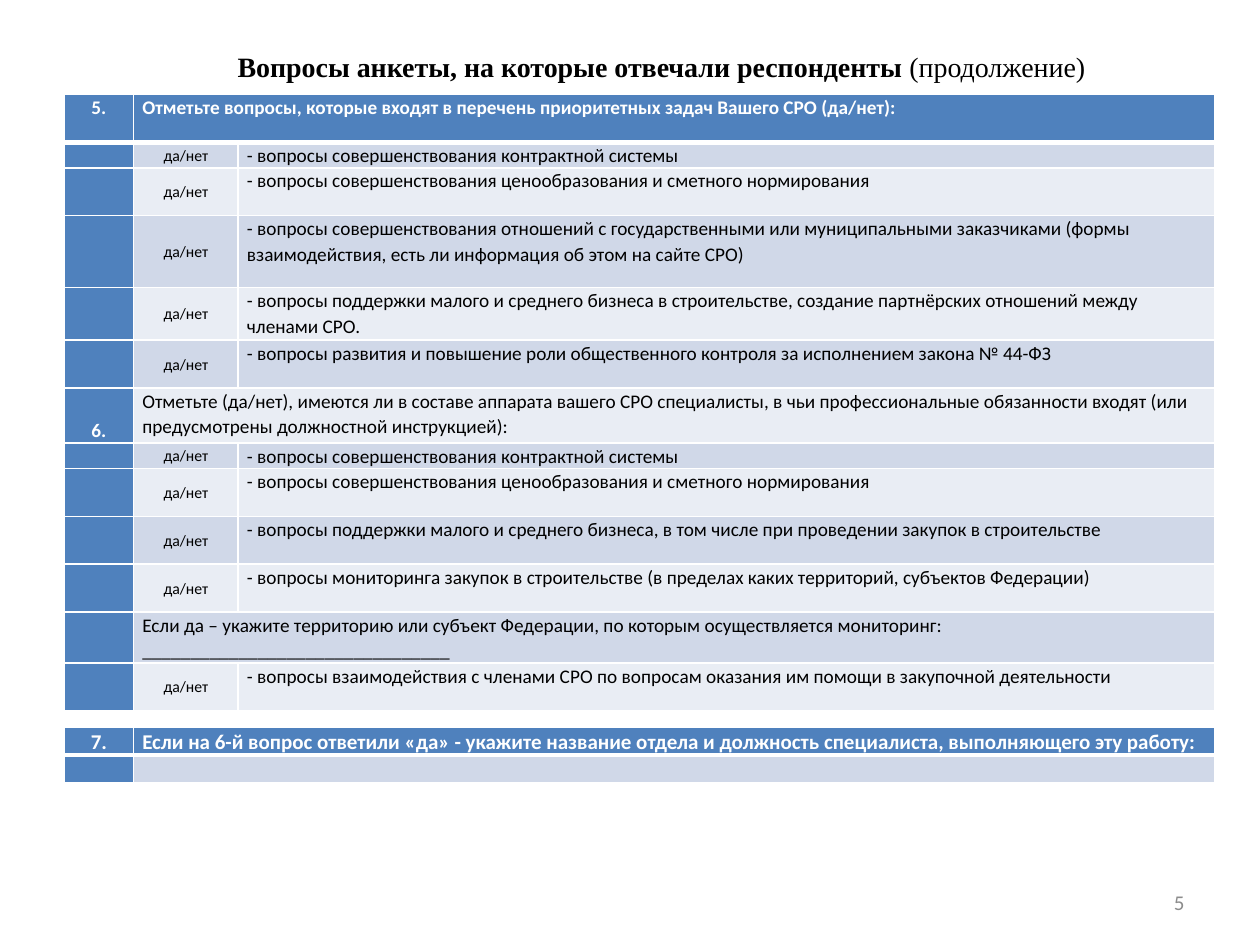
from dataclasses import dataclass

from lxml import etree
from pptx import Presentation
from pptx import util as u
from pptx.dml.color import RGBColor
from pptx.enum import text
from pptx.oxml import ns

WHITE = RGBColor(0xFF, 0xFF, 0xFF)
BLACK = RGBColor(0, 0, 0)
GREY = RGBColor(0x8C, 0x8C, 0x8C)
BLUE = RGBColor(0x4F, 0x81, 0xBD)
BANDS = (RGBColor(0xE9, 0xED, 0xF4), RGBColor(0xD0, 0xD8, 0xE8))
WIDE, HIGH = u.Inches(10), u.Inches(7.5)
UNIT = u.Inches(0.19)
LEFT, CENTER, RIGHT = text.PP_ALIGN.LEFT, text.PP_ALIGN.CENTER, text.PP_ALIGN.RIGHT
TOP, MIDDLE, BOTTOM = (text.MSO_ANCHOR.TOP, text.MSO_ANCHOR.MIDDLE,
                       text.MSO_ANCHOR.BOTTOM)
YESNO = "да/нет"


@dataclass
class Row:
    """One table row: its height in units, text, number and kind."""
    units: float
    body: str = ""
    num: str = ""
    mark: str = ""
    anchor: int = TOP


def ask(units: float, body: str) -> Row:
    """Make a row that is answered with yes or no."""
    return Row(units, "- " + body, mark=YESNO)


CONTRACT = ask(1.03, "вопросы совершенствования контрактной системы")
PRICING = ask(2, "вопросы совершенствования ценообразования и сметного нормирования")
SURVEY = [
    Row(2, "Отметьте вопросы, которые входят в перечень приоритетных задач Вашего СРО (да/нет):", "5."),
    CONTRACT,
    PRICING,
    ask(3, "вопросы совершенствования отношений с государственными или муниципальными заказчиками "
           "(формы взаимодействия, есть ли информация об этом на сайте СРО)"),
    ask(2.2, "вопросы поддержки малого и среднего бизнеса в строительстве, создание партнёрских "
             "отношений между членами СРО."),
    ask(2, "вопросы развития и повышение роли общественного контроля за исполнением закона № 44-ФЗ"),
    Row(2.3, "Отметьте (да/нет), имеются ли в составе аппарата вашего СРО специалисты, в чьи "
             "профессиональные обязанности входят (или предусмотрены должностной инструкцией):", "6."),
    CONTRACT,
    PRICING,
    ask(2, "вопросы поддержки малого и среднего бизнеса, в том числе при проведении закупок в строительстве"),
    ask(2, "вопросы мониторинга закупок в строительстве (в пределах каких территорий, субъектов Федерации)"),
    Row(2.1, "Если да – укажите территорию или субъект Федерации, по которым осуществляется "
             "мониторинг: " + "_" * 32, anchor=MIDDLE),
    ask(2, "вопросы взаимодействия с членами СРО по вопросам оказания им помощи в закупочной деятельности"),
]
STAFF = [
    Row(1.15, "Если на 6-й вопрос ответили «да» - укажите название отдела и должность "
              "специалиста, выполняющего эту работу:", "7."),
    Row(1.15),
]


def write(para, words: str, size: float = 11, name: str = "Calibri",
          color: RGBColor = BLACK, bold: bool = False, align=LEFT, lead: float = 1) -> None:
    """Add a formatted run to a paragraph."""
    para.alignment, para.line_spacing = align, lead
    if not words:
        etree.SubElement(para._p, ns.qn("a:endParaRPr"), sz=str(int(size * 100)))
        return
    run = para.add_run()
    run.text = words
    font = run.font
    font.size, font.name, font.bold = u.Pt(size), name, bold
    font.color.rgb = color


def edge(cell, top: float, base: float) -> None:
    """Draw white borders around a cell."""
    prop = cell._tc.get_or_add_tcPr()
    for side, width in (("L", 1), ("R", 1), ("T", top), ("B", base)):
        line = etree.SubElement(prop, ns.qn("a:ln" + side), w=str(u.Pt(width)))
        fill = etree.SubElement(line, ns.qn("a:solidFill"))
        etree.SubElement(fill, ns.qn("a:srgbClr"), val=str(WHITE))


def dress(cell, fill: RGBColor, index: int, anchor=TOP) -> None:
    """Set the borders, fill, margins and anchor of a cell."""
    edge(cell, 3 if index == 1 else 1, 3 if index == 0 else 1)
    cell.fill.solid()
    cell.fill.fore_color.rgb = fill
    cell.margin_left = cell.margin_right = u.Inches(0.07)
    cell.margin_top = cell.margin_bottom = 0
    cell.vertical_anchor = anchor


def grid(slide, top: float, cols: list[float], rows: list[Row], size: float) -> None:
    """Draw a survey table with columns given as shares of the slide width."""
    high = int(sum(row.units for row in rows) * UNIT)
    table = slide.shapes.add_table(len(rows), len(cols), int(WIDE * 0.051),
                                   int(HIGH * top), int(WIDE * sum(cols)), high).table
    for col, share in zip(table.columns, cols):
        col.width = int(WIDE * share)
    last = len(cols) - 1
    for i, row in enumerate(rows):
        table.rows[i].height = int(row.units * UNIT)
        head = i == 0
        shade = BLUE if head else BANDS[i % 2]
        cells = [table.cell(i, j) for j in range(len(cols))]
        dress(cells[0], BLUE, i, TOP if head else BOTTOM)
        for cell in cells[1:]:
            dress(cell, shade, i, row.anchor)
        write(cells[0].text_frame.paragraphs[0], row.num, size=size, color=WHITE,
              bold=True, align=CENTER, lead=1.07)
        body = cells[last]
        if row.mark:
            cells[1].vertical_anchor = MIDDLE
            write(cells[1].text_frame.paragraphs[0], row.mark, size=9,
                  align=CENTER, lead=1.07)
        elif last > 1:
            cells[1].merge(body)
            body = cells[1]
        write(body.text_frame.paragraphs[0], row.body, size=size,
              color=WHITE if head else BLACK, bold=head, lead=1.07)


def place(shape, x: float, y: float, w: float, h: float) -> None:
    """Position a shape by shares of the slide size."""
    shape.left, shape.top = int(WIDE * x), int(HIGH * y)
    shape.width, shape.height = int(WIDE * w), int(HIGH * h)


def main() -> None:
    """Build the survey slide."""
    deck = Presentation()
    deck.slide_width, deck.slide_height = WIDE, HIGH
    slide = deck.slides.add_slide(deck.slide_layouts[5])
    title = slide.shapes.title
    place(title, 0.1, 0.04, 0.85, 0.06)
    title.text_frame.vertical_anchor = MIDDLE
    para = title.text_frame.paragraphs[0]
    for words, bold in (("Вопросы анкеты, на которые отвечали респонденты ", True),
                        ("(продолжение)", False)):
        write(para, words, size=16, name="Times New Roman", bold=bold, align=CENTER)
    grid(slide, 0.1, [0.055, 0.083, 0.775], SURVEY, 11)
    grid(slide, 0.77, [0.055, 0.858], STAFF, 12)
    page = slide.shapes.add_textbox(0, 0, 0, 0)
    place(page, 0.72, 0.93, 0.23, 0.05)
    page.text_frame.word_wrap = True
    page.text_frame.vertical_anchor = MIDDLE
    write(page.text_frame.paragraphs[0], "5", size=12, color=GREY, align=RIGHT)
    deck.save("out.pptx")


if __name__ == "__main__":
    main()
